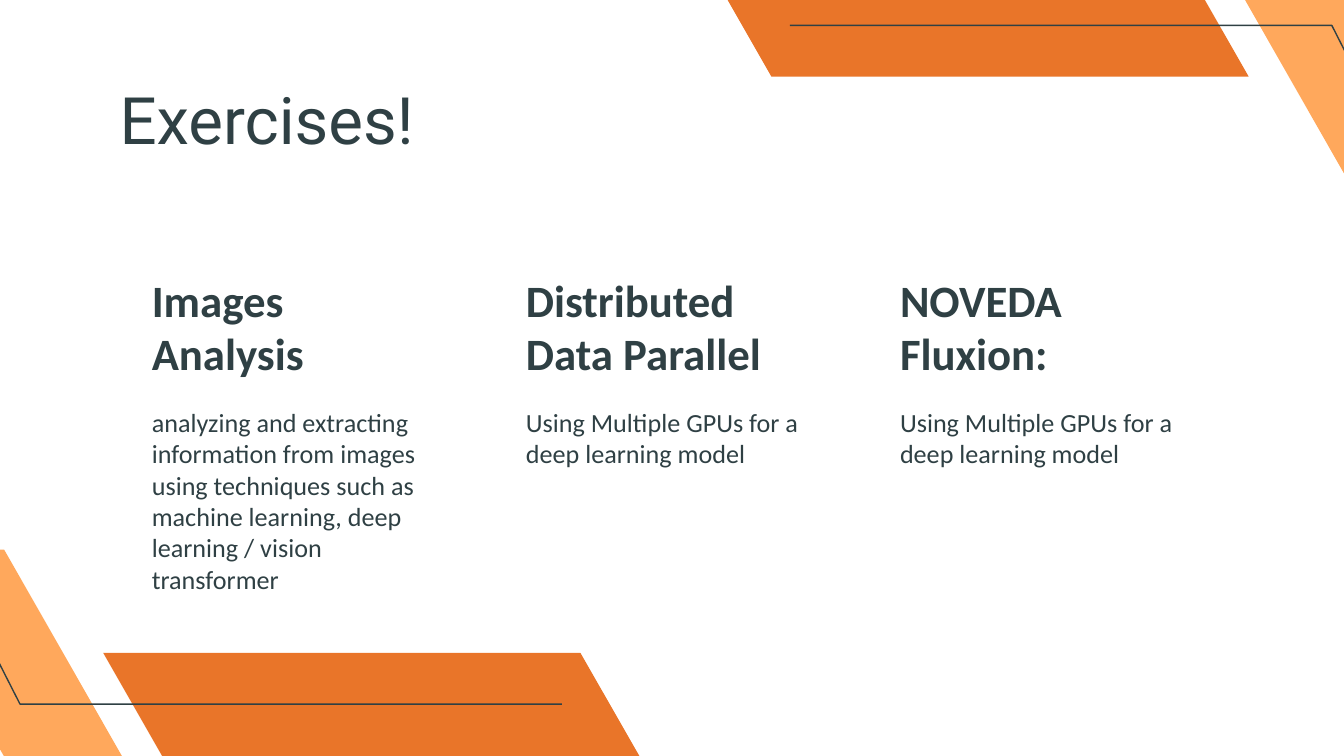
from pptx import Presentation
from pptx.dml.color import RGBColor
from pptx.enum.text import MSO_ANCHOR
from pptx.util import Cm, Pt

INK, ORANGE, PEACH = "2F4044", "E97529", "FFA85C"

BAND = [(0, 0), (9.02, 0), (10.14, 1.96), (1.12, 1.96)]
WEDGE = [(9.78, 0), (12.01, 0), (14.27, 3.91), (12.01, 3.91)]
RULE = [(1.47, 0.99), (11.71, 0.99), (13.79, 5.08)]

EXERCISES = [
    ("Images Analysis",
     "analyzing and extracting information from images using techniques "
     "such as machine learning, deep learning / vision transformer"),
    ("Distributed Data Parallel", "Using Multiple GPUs for a deep learning model"),
    ("NOVEDA Fluxion:", "Using Multiple GPUs for a deep learning model"),
]


def colour(value):
    """Turn a hex string into a colour."""
    return RGBColor.from_string(value)


def add_outline(page, points, fill=None, line=None):
    """Draw a filled polygon, or an open line, through points in centimetres."""
    corners = [(Cm(x), Cm(y)) for x, y in points]
    builder = page.shapes.build_freeform(*corners[0])
    builder.add_line_segments(corners[1:], close=fill is not None)
    shape = builder.convert_to_shape()
    shape.shadow.inherit = False
    if fill:
        shape.fill.solid()
        shape.fill.fore_color.rgb = colour(fill)
    else:
        shape.fill.background()
    if line:
        shape.line.color.rgb = colour(line)
        shape.line.width = Pt(0.75)
    else:
        shape.line.fill.background()


def add_corner(page, left, top, turn):
    """Place the corner ornament from its origin; turn -1 rotates it half way."""
    def placed(points):
        return [(left + turn * x, top + turn * y) for x, y in points]

    add_outline(page, placed(BAND), fill=ORANGE)
    add_outline(page, placed(WEDGE), fill=PEACH)
    add_outline(page, placed(RULE), line=INK)


def add_text(page, left, top, width, height, text, size, font="Calibri",
             bold=False, anchor=MSO_ANCHOR.TOP, inset_top=0.25):
    """Place one paragraph of wrapped text in a box given in centimetres."""
    box = page.shapes.add_textbox(Cm(left), Cm(top), Cm(width), Cm(height))
    frame = box.text_frame
    frame.word_wrap = True
    frame.vertical_anchor = anchor
    frame.margin_left = frame.margin_right = frame.margin_bottom = Cm(0.25)
    frame.margin_top = Cm(inset_top)
    para = frame.paragraphs[0]
    span = para.add_run()
    span.text = text
    span.font.name = font
    span.font.size = Pt(size)
    span.font.bold = bold
    span.font.color.rgb = colour(INK)


def add_exercise(page, left, top, width, heading, summary):
    """Place a bold heading with its summary below."""
    heading_height = 1.46
    add_text(page, left, top, width, heading_height, heading, 24,
             bold=True, anchor=MSO_ANCHOR.BOTTOM)
    add_text(page, left, top + heading_height, width, 2.41, summary, 14)


def main():
    """Build the exercises slide and save it."""
    deck = Presentation()
    deck.slide_width, deck.slide_height = Cm(25.4), Cm(14.29)
    page = deck.slides.add_slide(deck.slide_layouts[6])
    add_corner(page, 13.46, -0.51, 1)
    add_corner(page, 12.09, 14.3, -1)
    add_text(page, 2.01, 1.5, 21.41, 1.45, "Exercises!", 35,
             font="Roboto", inset_top=0)
    for index, (heading, summary) in enumerate(EXERCISES):
        add_exercise(page, 2.62 + 7.07 * index, 5.97, 6.04, heading, summary)
    deck.save("out.pptx")


if __name__ == "__main__":
    main()
